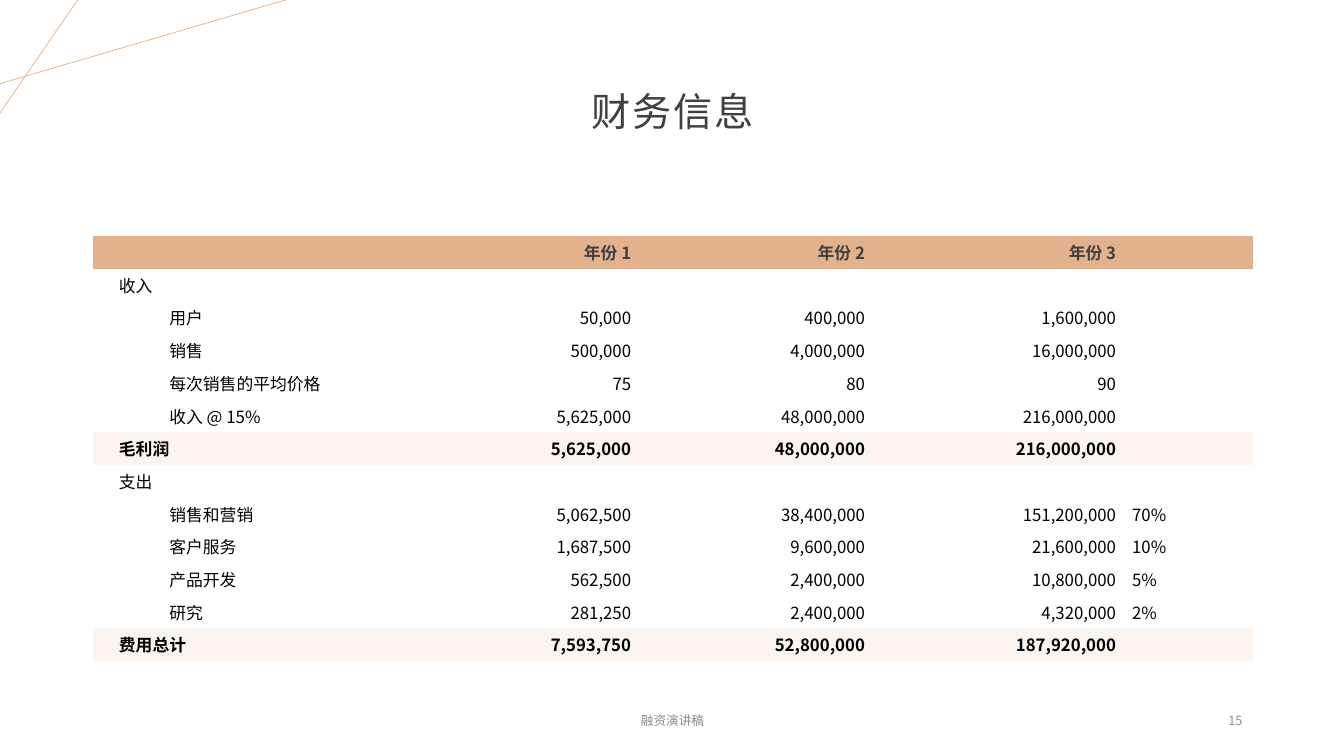
from lxml import etree
from pptx import Presentation
from pptx.dml.color import RGBColor
from pptx.enum.shapes import MSO_CONNECTOR
from pptx.enum.text import MSO_ANCHOR, PP_ALIGN
from pptx.oxml.ns import qn
from pptx.util import Inches, Pt

LEFT, CENTER, RIGHT = PP_ALIGN.LEFT, PP_ALIGN.CENTER, PP_ALIGN.RIGHT
MIDDLE = MSO_ANCHOR.MIDDLE
STRAIGHT = MSO_CONNECTOR.STRAIGHT

FONT = "Noto Sans CJK SC"
COLORS = {"accent": "E2B18D", "total": "FBF4EF", "heading": "404040",
          "body": "000000", "footer": "8C8C8C"}
PLAIN_TABLE_STYLE = "{2D5ABB26-0587-4C30-8999-92F81FD0307C}"

TITLE = "财务信息"
FOOTER = "融资演讲稿"
PAGE_NUMBER = "15"

# Row kind, then label, three years and share
FINANCIALS = [
    ("header", "", "年份 1", "年份 2", "年份 3", ""),
    ("section", "收入", "", "", "", ""),
    ("item", "用户", "50,000", "400,000", "1,600,000", ""),
    ("item", "销售", "500,000", "4,000,000", "16,000,000", ""),
    ("item", "每次销售的平均价格", "75", "80", "90", ""),
    ("item", "收入 @ 15%", "5,625,000", "48,000,000", "216,000,000", ""),
    ("total", "毛利润", "5,625,000", "48,000,000", "216,000,000", ""),
    ("section", "支出", "", "", "", ""),
    ("item", "销售和营销", "5,062,500", "38,400,000", "151,200,000", "70%"),
    ("item", "客户服务", "1,687,500", "9,600,000", "21,600,000", "10%"),
    ("item", "产品开发", "562,500", "2,400,000", "10,800,000", "5%"),
    ("item", "研究", "281,250", "2,400,000", "4,320,000", "2%"),
    ("total", "费用总计", "7,593,750", "52,800,000", "187,920,000", ""),
]
COLUMN_WIDTHS = [3.54, 1.88, 2.32, 2.49, 1.28]
COLUMN_ALIGNS = [LEFT, RIGHT, RIGHT, RIGHT, LEFT]
TABLE_LEFT, TABLE_TOP, TABLE_WIDTH, TABLE_HEIGHT = 0.92, 2.34, 11.5, 4.22
ROW_FILLS = {"header": "accent", "total": "total"}

CORNER_LINES = [((0, 0.83), (2.83, 0)), ((0.77, 0), (0, 1.12))]


def rgb(name):
    """Return the named palette colour."""
    return RGBColor.from_string(COLORS[name])


def write(paragraph, text, size, color, align, bold=False):
    """Add one styled run to a paragraph and return its properties."""
    paragraph.alignment = align
    run = paragraph.add_run()
    run.text = text
    run.font.size = Pt(size)
    run.font.bold = bold
    run.font.name = FONT
    run.font.color.rgb = rgb(color)
    properties = run.font._element
    etree.SubElement(properties, qn("a:ea")).set("typeface", FONT)
    return properties


def add_text(slide, box, text, size, color, align):
    """Add a vertically centred one-line text box."""
    frame = slide.shapes.add_textbox(*map(Inches, box)).text_frame
    frame.word_wrap = True
    frame.vertical_anchor = MIDDLE
    return write(frame.paragraphs[0], text, size, color, align)


def add_corner_line(slide, start, end):
    """Draw one thin decorative line."""
    line = slide.shapes.add_connector(STRAIGHT, *map(Inches, start + end))
    line.line.color.rgb = rgb("accent")
    line.line.width = Pt(0.5)
    etree.SubElement(line._element.spPr, qn("a:effectLst"))


def fill_cell(cell, kind, column, text):
    """Style one table cell according to its row kind and column."""
    if kind in ROW_FILLS:
        cell.fill.solid()
        cell.fill.fore_color.rgb = rgb(ROW_FILLS[kind])
    else:
        cell.fill.background()
    cell.vertical_anchor = MIDDLE
    cell.margin_left = Inches(0.26 if column == 0 else 0.08)
    cell.margin_right = Inches(0.08)
    cell.margin_top = cell.margin_bottom = Inches(0.04)
    paragraph = cell.text_frame.paragraphs[0]
    if text:
        write(paragraph, text, 12, "heading" if kind == "header" else "body",
              COLUMN_ALIGNS[column], kind in ROW_FILLS)
        if kind == "item" and column == 0:
            indent = paragraph._p.get_or_add_pPr()
            indent.set("marL", str(Inches(0.5)))
            indent.set("indent", "0")
    else:
        # Keeps an empty cell from stretching its row
        etree.SubElement(paragraph._p, qn("a:endParaRPr")).set("sz", "1200")


def add_financials(slide):
    """Add the financial table."""
    table = slide.shapes.add_table(
        len(FINANCIALS), len(COLUMN_WIDTHS), Inches(TABLE_LEFT),
        Inches(TABLE_TOP), Inches(TABLE_WIDTH), Inches(TABLE_HEIGHT)).table
    table._tbl.tblPr.find(qn("a:tableStyleId")).text = PLAIN_TABLE_STYLE
    table.horz_banding = False
    for column, width in zip(table.columns, COLUMN_WIDTHS):
        column.width = Inches(width)
    for row, (kind, *texts) in zip(table.rows, FINANCIALS):
        row.height = Inches(TABLE_HEIGHT / len(FINANCIALS))
        for column, text in enumerate(texts):
            fill_cell(row.cells[column], kind, column, text)


presentation = Presentation()
presentation.slide_width = Inches(13.33)
presentation.slide_height = Inches(7.5)
slide = presentation.slides.add_slide(presentation.slide_layouts[6])

for start, end in CORNER_LINES:
    add_corner_line(slide, start, end)
title = add_text(slide, (0.92, 0.4, 11.5, 1.45), TITLE, 28, "heading", CENTER)
title.set("spc", "150")
slide.shapes[-1].text_frame.paragraphs[0].line_spacing = 0.9
add_text(slide, (4.42, 6.95, 4.5, 0.4), FOOTER, 9, "footer", CENTER)
add_text(slide, (9.42, 6.95, 3, 0.4), PAGE_NUMBER, 9, "footer", RIGHT)
add_financials(slide)

presentation.save("out.pptx")
